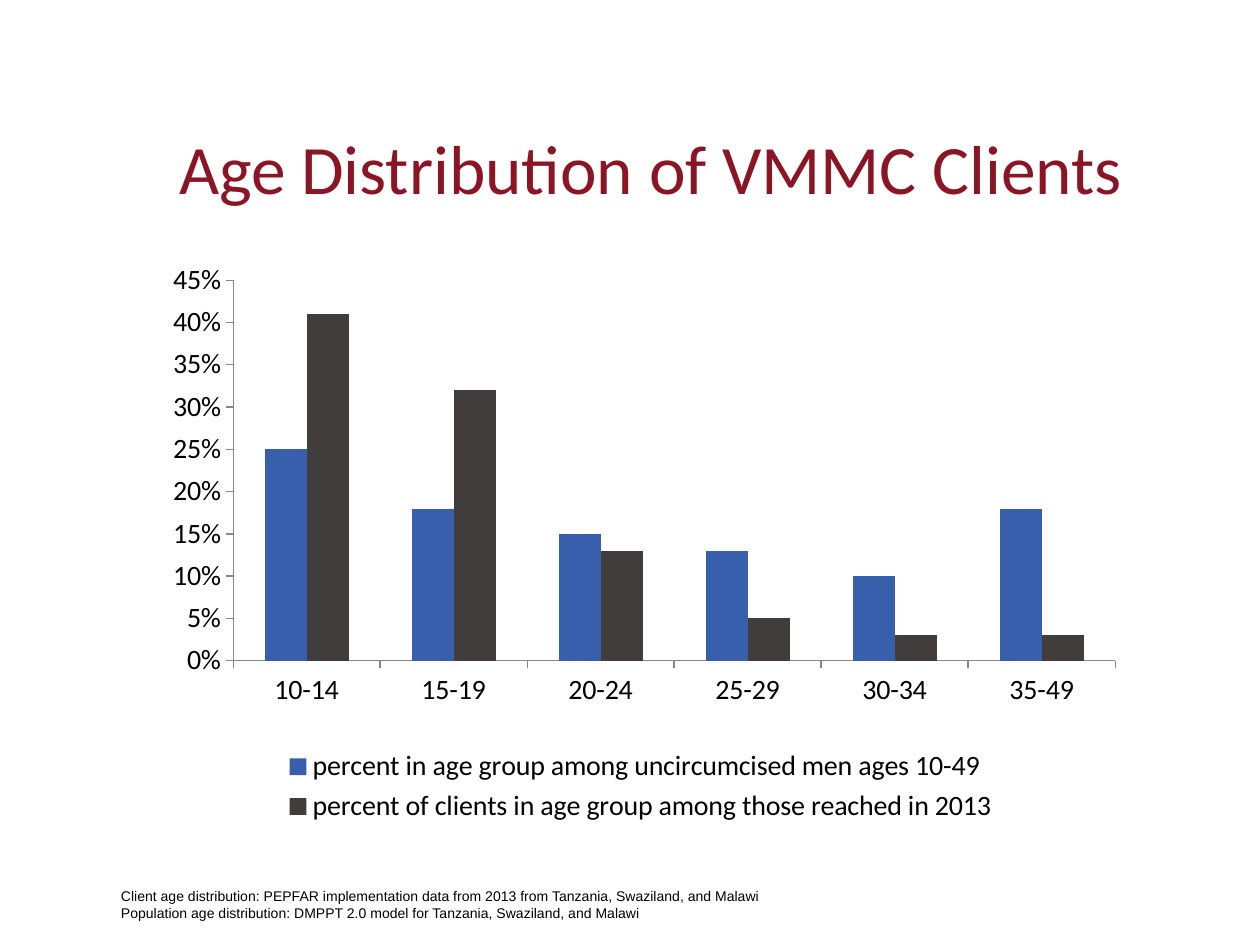
from lxml import etree
from pptx import Presentation, util as u
from pptx.chart.data import CategoryChartData
from pptx.dml.color import RGBColor
from pptx.enum import chart as ch, text
from pptx.oxml import parse_xml
from pptx.oxml.ns import nsdecls, qn

Pt = u.Pt
COLORS = {"title": "8B1524", "text": "000000", "men": "375FAC",
          "clients": "403D3C", "axis": "878787"}
TITLE = "Age Distribution of VMMC Clients"
SOURCES = [
    "Client age distribution: PEPFAR implementation data from 2013 from Tanzania, Swaziland, and Malawi",
    "Population age distribution: DMPPT 2.0 model for Tanzania, Swaziland, and Malawi",
]
AGES = ["10-14", "15-19", "20-24", "25-29", "30-34", "35-49"]
SERIES = [
    ("percent in age group among uncircumcised men ages 10-49", "men",
     [0.25, 0.18, 0.15, 0.13, 0.10, 0.18]),
    ("percent of clients in age group among those reached in 2013", "clients",
     [0.41, 0.32, 0.13, 0.05, 0.03, 0.03]),
]
BOXES = {"title": (77.8, 32.4, 588.2, 86.4),
         "chart": (84.2, 149.8, 563.8, 324),
         "sources": (69.1, 499.7, 437.8, 26.6)}
PLOT = {"x": 0.087, "y": 0.032, "w": 0.894, "h": 0.671}


def rgb(name):
    return RGBColor.from_string(COLORS[name])


def set_font(font, size, name="Calibri", color="text"):
    font.size, font.name, font.bold = Pt(size), name, False
    font.color.rgb = rgb(color)


def fill_placeholder(sp, lines, box, align, **font):
    """Place the box and write each line as an unbulleted paragraph."""
    sp.left, sp.top, sp.width, sp.height = map(Pt, box)
    tf = sp.text_frame
    tf.word_wrap, tf.auto_size = True, text.MSO_AUTO_SIZE.NONE
    tf.vertical_anchor = text.MSO_ANCHOR.BOTTOM
    tf.margin_left = tf.margin_right = tf.margin_top = tf.margin_bottom = 0
    tf.text = "\n".join(lines)
    for p in tf.paragraphs:
        pPr = p._p.get_or_add_pPr()
        pPr.set("marL", "0")
        pPr.set("indent", "0")
        etree.SubElement(pPr, qn("a:buNone"))
        p.alignment = align
        p.space_before = Pt(0)
        for r in p.runs:
            set_font(r.font, **font)


def set_inner_plot(chart):
    """Fix the inner plot area as fractions of the chart."""
    area = chart._chartSpace.chart.plotArea
    for old in area.findall(qn("c:layout")):
        area.remove(old)
    modes = "".join(f'<c:{k}Mode val="edge"/>' for k in "xy")
    sizes = "".join(f'<c:{k} val="{v}"/>' for k, v in PLOT.items())
    area.insert(0, parse_xml(
        f'<c:layout {nsdecls("c")}><c:manualLayout><c:layoutTarget val="inner"/>'
        f'{modes}{sizes}</c:manualLayout></c:layout>'))


def add_age_chart(s):
    data = CategoryChartData(number_format="0%")
    data.categories = AGES
    for name, _, values in SERIES:
        data.add_series(name, values)
    chart = s.shapes.add_chart(ch.XL_CHART_TYPE.COLUMN_CLUSTERED,
                               *map(Pt, BOXES["chart"]), data).chart
    set_font(chart.font, 14)
    chart.has_title = False
    plot = chart.plots[0]
    plot.gap_width, plot.overlap, plot.vary_by_categories = 150, 0, False
    for series, (_, color, _) in zip(plot.series, SERIES):
        series.format.fill.solid()
        series.format.fill.fore_color.rgb = rgb(color)
    for axis in (chart.category_axis, chart.value_axis):
        axis.has_major_gridlines = False
        axis.major_tick_mark = ch.XL_TICK_MARK.OUTSIDE
        axis.minor_tick_mark = ch.XL_TICK_MARK.NONE
        axis.format.line.color.rgb = rgb("axis")
        axis.format.line.width = Pt(0.75)
        set_font(axis.tick_labels.font, 16)
    axis = chart.value_axis
    axis.minimum_scale, axis.maximum_scale, axis.major_unit = 0, 0.45, 0.05
    axis.tick_labels.number_format = "0%"
    axis.tick_labels.number_format_is_linked = False
    chart.has_legend = True
    chart.legend.position = ch.XL_LEGEND_POSITION.BOTTOM
    chart.legend.include_in_layout = False
    set_font(chart.legend.font, 16)
    set_inner_plot(chart)


def main():
    prs = Presentation()
    prs.slide_width, prs.slide_height = Pt(720), Pt(540)
    s = prs.slides.add_slide(prs.slide_layouts[1])
    fill_placeholder(s.shapes.title, [TITLE], BOXES["title"],
                     text.PP_ALIGN.CENTER, size=39.6, color="title")
    fill_placeholder(s.placeholders[1], SOURCES, BOXES["sources"],
                     text.PP_ALIGN.LEFT, size=8, name="Arial")
    add_age_chart(s)
    prs.save("out.pptx")


if __name__ == "__main__":
    main()
